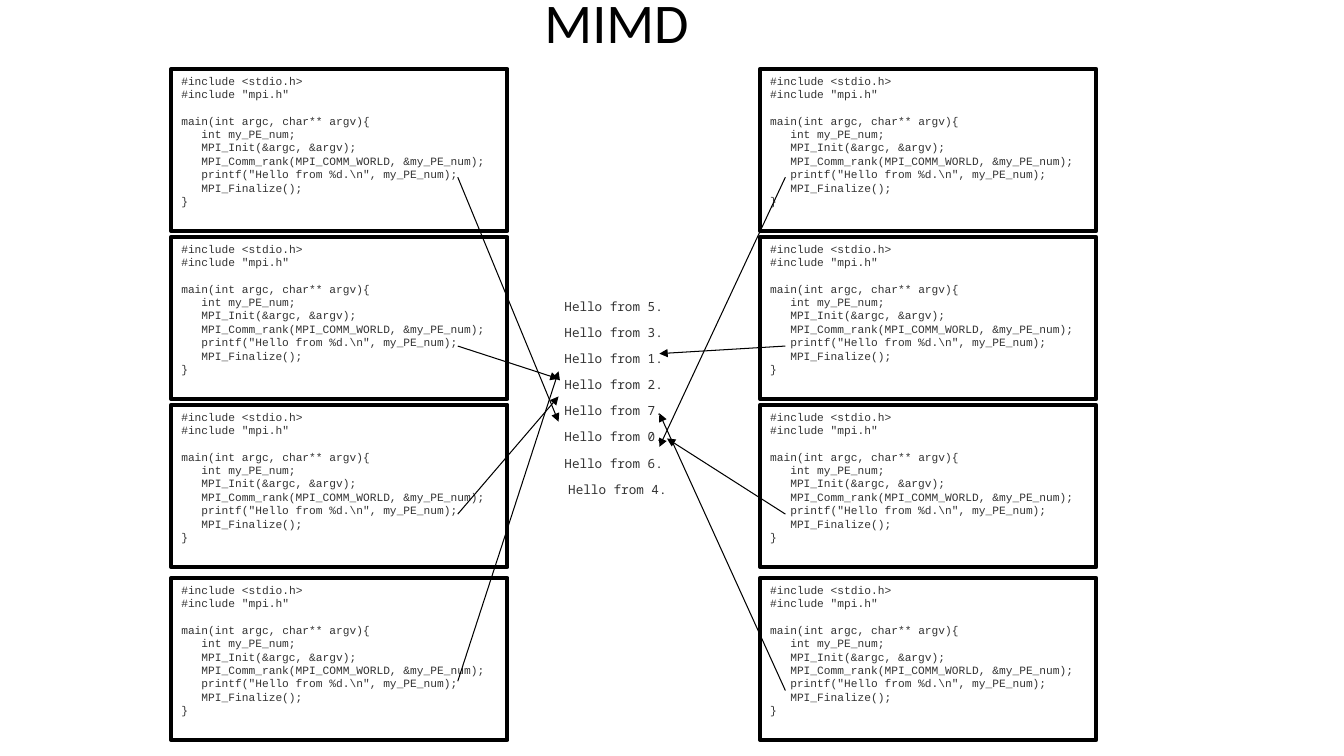
"""Build the MIMD slide: eight identical programs feeding one shared output."""
from dataclasses import dataclass

from lxml.etree import SubElement
from pptx import Presentation
from pptx.dml.color import RGBColor as Rgb
from pptx.enum.shapes import MSO_CONNECTOR as Connector, MSO_SHAPE as Preset
from pptx.enum.text import MSO_ANCHOR as Anchor, MSO_AUTO_SIZE as Fit, PP_ALIGN as Align
from pptx.oxml.ns import qn
from pptx.util import Inches, Pt

GRID_COLUMNS, GRID_ROWS, CELLS_PER_INCH = 160, 90, 12


@dataclass(frozen=True)
class Theme:
    """Colours, fonts and sizes of the slide."""
    ink: Rgb = Rgb(0, 0, 0)
    code_ink: Rgb = Rgb(0x33, 0x33, 0x33)
    title: tuple = ("Calibri", Pt(40))
    code: tuple = ("Courier New", Pt(8))
    output: tuple = ("Noto Sans Mono", Pt(9))
    frame: Pt = Pt(3)
    arrow: Pt = Pt(0.75)
    code_indent: Pt = Pt(14.4)
    code_gap: Pt = Pt(9.5)


THEME = Theme()

TITLE_AREA = (22.4, -1.8, 102, 9)
OUTPUT_AREA = (65.3, 35.3, 16.4, 30.1)
PROGRAM_SIZE = (40, 19.3)
PROGRAM_ROWS = (8.2, 28.2, 48.2, 68.8)
LEFT_COLUMN, RIGHT_COLUMN = 20.4, 90.5

INCLUDES = ["#include <stdio.h>", '#include "mpi.h"']
MAIN_HEAD = "main(int argc, char** argv){"
MAIN_BODY = [
    "int my_PE_num;",
    "MPI_Init(&argc, &argv);",
    "MPI_Comm_rank(MPI_COMM_WORLD, &my_PE_num);",
    'printf("Hello from %d.\\n", my_PE_num);',
    "MPI_Finalize();",
]
PROGRAM = [*INCLUDES, MAIN_HEAD, *MAIN_BODY, "}"]
PRINT_ORDER = (5, 3, 1, 2, 7, 0, 6, 4)

LEFT_EXIT, RIGHT_EXIT = 54.5, 93.5
LEFT_ARROWS = [(21.1, 66.5, 50.2), (41.2, 66.5, 45.1), (61.2, 66.5, 47.2), (81.1, 66.5, 44.2)]
RIGHT_ARROWS = [(21.1, 78.5, 53.2), (41.2, 78.5, 42.1), (61.2, 79.4, 52.2), (82.2, 78.5, 49.2)]


def cells(*counts):
    """Convert grid cells to slide lengths."""
    return [Inches(count / CELLS_PER_INCH) for count in counts]


def apply_format(target, **values):
    """Set each named attribute on the target."""
    for attribute, value in values.items():
        setattr(target, attribute, value)


def write_lines(frame, lines, face, ink, **paragraph_format):
    """Fill a text frame with one formatted paragraph per line."""
    family, size = face
    for position, line in enumerate(lines):
        paragraph = frame.add_paragraph() if position else frame.paragraphs[0]
        apply_format(paragraph, **paragraph_format)
        run = paragraph.add_run()
        run.text = line
        apply_format(run.font, name=family, size=size)
        run.font.color.rgb = ink


def add_title(slide, wording):
    """Place and format the title placeholder."""
    title = slide.shapes.title
    apply_format(title, **dict(zip(("left", "top", "width", "height"), cells(*TITLE_AREA))))
    apply_format(title.text_frame, vertical_anchor=Anchor.BOTTOM, auto_size=Fit.NONE)
    write_lines(title.text_frame, [wording], THEME.title, THEME.ink,
                alignment=Align.CENTER, line_spacing=0.9)


def add_output(slide):
    """Add the greetings in the order they were printed."""
    frame = slide.shapes.add_textbox(*cells(*OUTPUT_AREA)).text_frame
    frame.word_wrap = True
    *earlier, last = [f"Hello from {rank}." for rank in PRINT_ORDER]
    greetings = [f"{greeting} " for greeting in earlier] + [last]
    write_lines(frame, greetings, THEME.output, THEME.code_ink,
                alignment=Align.CENTER, line_spacing=0.8, space_before=Pt(10))


def add_program(slide, column, row):
    """Add one framed program listing."""
    listing = slide.shapes.add_shape(Preset.RECTANGLE, *cells(column, row, *PROGRAM_SIZE))
    listing.shadow.inherit = False
    listing.fill.background()
    listing.line.color.rgb = THEME.ink
    listing.line.width = THEME.frame
    frame = listing.text_frame
    apply_format(frame, word_wrap=True, vertical_anchor=Anchor.TOP)
    write_lines(frame, PROGRAM, THEME.code, THEME.code_ink, alignment=Align.LEFT)
    for paragraph in frame.paragraphs:
        if paragraph.text in MAIN_BODY:
            paragraph._p.get_or_add_pPr().set("marL", str(THEME.code_indent))
        elif paragraph.text == MAIN_HEAD:
            paragraph.space_before = THEME.code_gap


def add_arrow(slide, start, end):
    """Draw a thin arrow between two grid points."""
    arrow = slide.shapes.add_connector(Connector.STRAIGHT, *cells(*start, *end))
    arrow.line.color.rgb = THEME.ink
    arrow.line.width = THEME.arrow
    SubElement(arrow.line._get_or_add_ln(), qn("a:tailEnd"), type="triangle")
    SubElement(arrow._element.spPr, qn("a:effectLst"))


def main():
    """Assemble and save the slide."""
    deck = Presentation()
    deck.slide_width, deck.slide_height = cells(GRID_COLUMNS, GRID_ROWS)
    slide = deck.slides.add_slide(deck.slide_layouts.get_by_name("Title Only"))
    add_title(slide, "MIMD")
    add_output(slide)
    for column in (LEFT_COLUMN, RIGHT_COLUMN):
        for row in PROGRAM_ROWS:
            add_program(slide, column, row)
    for exit_column, arrows in ((LEFT_EXIT, LEFT_ARROWS), (RIGHT_EXIT, RIGHT_ARROWS)):
        for exit_row, *target in arrows:
            add_arrow(slide, (exit_column, exit_row), target)
    deck.save("out.pptx")


if __name__ == "__main__":
    main()
